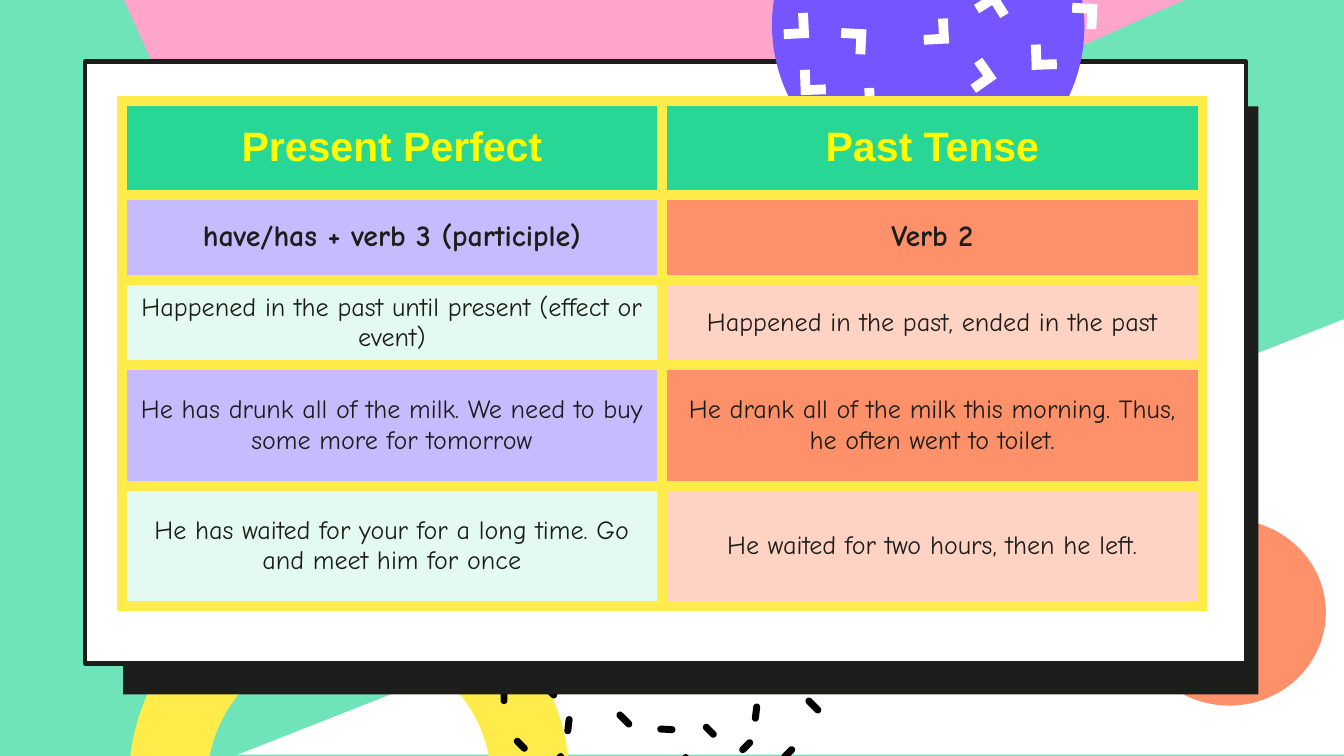
from math import cos, radians, sin

from lxml.etree import SubElement
from pptx import Presentation
from pptx.dml.color import RGBColor
from pptx.enum.shapes import MSO_SHAPE as SHAPE
from pptx.enum.text import MSO_ANCHOR, PP_ALIGN
from pptx.oxml.ns import qn
from pptx.util import Pt

PX = 9525  # EMU per px, 96 px to the inch
COLORS = {
    "mint": "70E4B9", "white": "FFFFFF", "ink": "1D1D1B", "black": "000000",
    "yellow": "FFEC4B", "orange": "FF916A", "pink": "FFA5CC", "purple": "7455FF",
    "green": "28D696", "lemon": "FFFF00", "lilac": "C7BBFF",
    "pale_mint": "E2FAF1", "pale_orange": "FFD3C3",
}


def rgb(color):
    return RGBColor.from_string(COLORS[color])


def add_part(kind, left, top, width, height, color, rotation=0):
    part = slide.shapes.add_shape(kind, left * PX, top * PX, width * PX, height * PX)
    part.rotation = rotation
    part.shadow.inherit = False
    part.fill.solid()
    part.fill.fore_color.rgb = rgb(color)
    part.line.fill.background()
    return part


deck = Presentation()
deck.slide_width, deck.slide_height = 960 * PX, 540 * PX
slide = deck.slides.add_slide(deck.slide_layouts[6])
slide.background.fill.solid()
slide.background.fill.fore_color.rgb = rgb("mint")

# Corner shapes
white_corner = add_part(SHAPE.RIGHT_TRIANGLE, 170, 228, 790, 311, "white")
white_corner.element.spPr.xfrm.set("flipH", "1")
ring = add_part(SHAPE.DONUT, 92, 403, 315, 311, "yellow")
ring.adjustments[0] = 0.18

# Confetti: centre x, centre y, length, angle
CONFETTI = [
    (491, 545, 13, 71), (507, 522, 12, 45), (533, 533, 12, 135), (581, 504, 14, 45),
    (540, 509, 13, 97), (563, 538, 12, 135), (372, 532, 12, 45), (398, 543, 12, 135),
    (360, 497, 12, 90), (446, 514, 14, 45), (476, 521, 13, 3), (393, 494, 12, 45),
    (406, 518, 13, 97),
]
for x, y, length, angle in CONFETTI:
    dash = add_part(SHAPE.ROUNDED_RECTANGLE, x - length / 2, y - 2.5, length, 5, "black", angle)
    dash.adjustments[0] = 0.5

add_part(SHAPE.OVAL, 809, 371, 138, 133, "orange")
add_part(SHAPE.RIGHT_TRIANGLE, 119, -169, 694, 324, "pink", 335.8)

# Board with its hard shadow
add_part(SHAPE.RECTANGLE, 88, 76, 811, 420, "ink")
board = add_part(SHAPE.RECTANGLE, 61, 44, 829, 430, "white")
board.line.color.rgb = rgb("ink")
board.line.width = Pt(2.25)

# Purple ball with white chevrons: outer corner x, y, angle of the first arm
add_part(SHAPE.OVAL, 549, -93, 228, 223, "purple", 260.5)
CHEVRONS = [
    (578, 27, 177), (619, 21, 93), (618, 81, 268), (712, 56, 145), (711, -6, 58),
    (678, 31, 177), (572, 68, 268), (784, 3, 93), (737, 50, 268),
]
CHEVRON_OUTLINE = [(0, 0), (18, 0), (18, 7), (7, 7), (7, 18), (0, 18)]
for x, y, angle in CHEVRONS:
    c, s = cos(radians(angle)), sin(radians(angle))
    points = [((x + u * c - v * s) * PX, (y + u * s + v * c) * PX) for u, v in CHEVRON_OUTLINE]
    outline = slide.shapes.build_freeform(*points[0], scale=1)
    outline.add_line_segments(points[1:], close=True)
    chevron = outline.convert_to_shape()
    chevron.shadow.inherit = False
    chevron.fill.solid()
    chevron.fill.fore_color.rgb = rgb("white")
    chevron.line.fill.background()

# Tense table: height, fills, (font, size, bold, colour), texts
HEADER = ("Arial", 22, True, "lemon")
FORMULA = ("Comic Neue", 16, True, "ink")
BODY = ("Comic Neue", 14, False, "ink")
STRONG, PALE = ("lilac", "orange"), ("pale_mint", "pale_orange")
ROWS = [
    (67, ("green", "green"), HEADER, ("Present Perfect", "Past Tense")),
    (61, STRONG, FORMULA, ("have/has + verb 3 (participle)", "Verb 2")),
    (61, PALE, BODY, ("Happened in the past until present (effect or event)",
                      "Happened in the past, ended in the past")),
    (86, STRONG, BODY, ("He has drunk all of the milk. We need to buy some more for tomorrow",
                        "He drank all of the milk this morning. Thus, he often went to toilet.")),
    (86, PALE, BODY, ("He has waited for your for a long time. Go and meet him for once",
                      "He waited for two hours, then he left.")),
]
table_height = sum(row[0] for row in ROWS)
tenses = slide.shapes.add_table(len(ROWS), 2, 87 * PX, 72 * PX, 772 * PX, table_height * PX).table
tenses.first_row = tenses.horz_banding = False
for column in tenses.columns:
    column.width = 386 * PX

for r, (height, fills, (font, size, bold, color), texts) in enumerate(ROWS):
    tenses.rows[r].height = height * PX
    for c, (fill, text) in enumerate(zip(fills, texts)):
        cell = tenses.cell(r, c)
        cell.vertical_anchor = MSO_ANCHOR.MIDDLE
        cell.text_frame.text = text
        paragraph = cell.text_frame.paragraphs[0]
        paragraph.alignment = PP_ALIGN.CENTER
        style = paragraph.runs[0].font
        style.name, style.size, style.bold = font, Pt(size), bold
        style.color.rgb = rgb(color)

        # Borders come before the fill in the cell properties
        properties = cell._tc.get_or_add_tcPr()
        for side in ("a:lnL", "a:lnR", "a:lnT", "a:lnB"):
            border = SubElement(properties, qn(side), w=str(Pt(6)))
            paint = SubElement(border, qn("a:solidFill"))
            SubElement(paint, qn("a:srgbClr"), val=COLORS["yellow"])
        cell.fill.solid()
        cell.fill.fore_color.rgb = rgb(fill)

deck.save("out.pptx")
